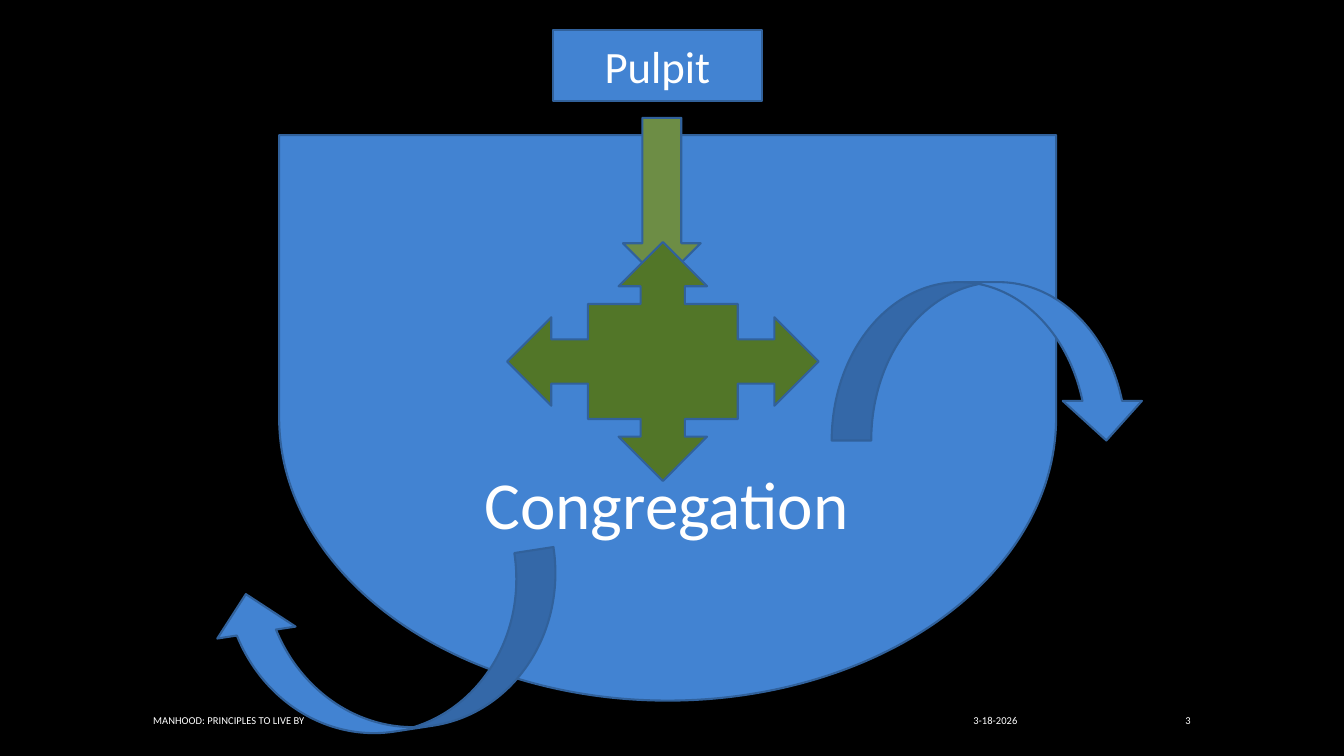
from pptx import Presentation
from pptx.dml.color import RGBColor
from pptx.enum.shapes import MSO_SHAPE
from pptx.enum.text import MSO_ANCHOR, MSO_AUTO_SIZE, PP_ALIGN
from pptx.util import Cm, Pt

COLORS = {
    "background": "000000",
    "text": "FFFFFF",
    "blue": "4283D2",
    "outline": "31619B",
    "light green": "6D8D45",
    "dark green": "527628",
}
FONT = "Calibri"

# Footer row: text, left, width, alignment
FOOTER_TOP, FOOTER_HEIGHT = 17.78, 0.76
FOOTER = [
    ("3-18-2026", 22.23, 3.66, PP_ALIGN.RIGHT),
    ("MANHOOD: PRINCIPLES TO LIVE BY", 3.61, 17.58, PP_ALIGN.LEFT),
    ("3", 26.87, 3.39, PP_ALIGN.RIGHT),
]

# Shapes: preset, (left, top, width, height), fill, rotation
HALL = (MSO_SHAPE.FLOWCHART_DELAY, (9.7, 0.74, 14.25, 19.58), "blue", 90)
PULPIT = (MSO_SHAPE.RECTANGLE, (13.94, 0.76, 5.26, 1.78), "blue", 0)
ARROWS = [
    (MSO_SHAPE.DOWN_ARROW, (15.7, 2.97, 1.96, 4.14), "light green", 0),
    (MSO_SHAPE.QUAD_ARROW_CALLOUT, (12.78, 6.1, 7.85, 6.02), "dark green", 0),
    (MSO_SHAPE.CURVED_DOWN_ARROW, (20.96, 7.11, 7.92, 3.99), "blue", 0),
    (MSO_SHAPE.CURVED_DOWN_ARROW, (5.46, 14.43, 8.84, 3.99), "blue", 171.3),
]
CONGREGATION_BOX = (11.96, 11.53, 10.36, 2.31)


def color(name):
    return RGBColor.from_string(COLORS[name])


def write(shape, text, size, align, anchor=MSO_ANCHOR.MIDDLE, wrap=True):
    frame = shape.text_frame
    frame.word_wrap = wrap
    frame.vertical_anchor = anchor
    para = frame.paragraphs[0]
    para.text = text
    para.alignment = align
    para.font.name = FONT
    para.font.size = Pt(size)
    para.font.color.rgb = color("text")


def add_text(page, bounds, *text_options):
    box = page.shapes.add_textbox(*map(Cm, bounds))
    write(box, *text_options)
    return box


def add_figure(page, preset, bounds, fill, rotation):
    shape = page.shapes.add_shape(preset, *map(Cm, bounds))
    shape.rotation = rotation
    shape.shadow.inherit = False
    shape.fill.solid()
    shape.fill.fore_color.rgb = color(fill)
    shape.line.color.rgb = color("outline")
    shape.line.width = Pt(1.5)
    return shape


def main():
    deck = Presentation()
    deck.slide_width, deck.slide_height = Cm(33.87), Cm(19.05)
    page = deck.slides.add_slide(deck.slide_layouts[6])
    page.background.fill.solid()
    page.background.fill.fore_color.rgb = color("background")

    # Footer
    for text, left, width, align in FOOTER:
        add_text(page, (left, FOOTER_TOP, width, FOOTER_HEIGHT), text, 7.5, align)

    # Congregation
    add_figure(page, *HALL)
    label = add_text(page, CONGREGATION_BOX, "Congregation", 48,
                     PP_ALIGN.LEFT, MSO_ANCHOR.TOP, False)
    label.text_frame.auto_size = MSO_AUTO_SIZE.SHAPE_TO_FIT_TEXT

    # Pulpit and the arrows leading out from it
    write(add_figure(page, *PULPIT), "Pulpit", 32, PP_ALIGN.CENTER)
    for arrow in ARROWS:
        add_figure(page, *arrow)

    deck.save("out.pptx")


if __name__ == "__main__":
    main()
